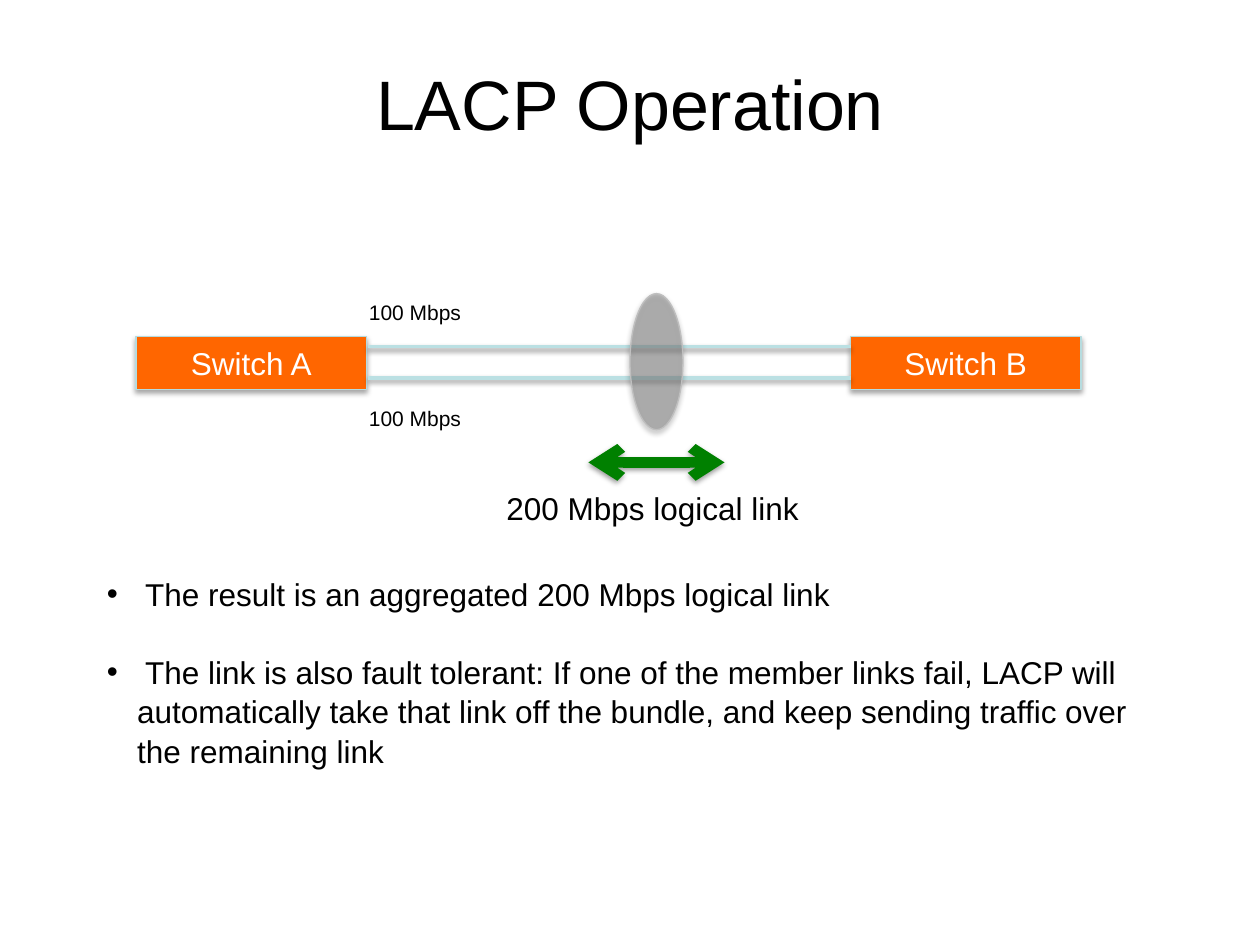
from lxml import etree
from pptx import Presentation
from pptx.dml.color import RGBColor
from pptx.enum.shapes import MSO_CONNECTOR, MSO_SHAPE
from pptx.enum.text import MSO_ANCHOR, MSO_AUTO_SIZE, PP_ALIGN
from pptx.oxml import parse_xml
from pptx.oxml.ns import nsdecls, qn
from pptx.util import Inches, Pt

RECT, OVAL = MSO_SHAPE.RECTANGLE, MSO_SHAPE.OVAL
STRAIGHT = MSO_CONNECTOR.STRAIGHT
MIDDLE, CENTER, LEFT = MSO_ANCHOR.MIDDLE, PP_ALIGN.CENTER, PP_ALIGN.LEFT
FIT = MSO_AUTO_SIZE.SHAPE_TO_FIT_TEXT

BLACK = RGBColor(0x00, 0x00, 0x00)
WHITE = RGBColor(0xFF, 0xFF, 0xFF)
ORANGE = RGBColor(0xFF, 0x66, 0x00)
GREEN = RGBColor(0x00, 0x80, 0x00)
GRAY = RGBColor(0x80, 0x80, 0x80)
SILVER = RGBColor(0xBF, 0xBF, 0xBF)
AQUA = RGBColor(0xB6, 0xDC, 0xDF)
PALE = RGBColor(0xBB, 0xE0, 0xE3)


class Deck:
    font = "Arial"
    size = 18

    def __init__(self):
        self.prs = Presentation()
        self.prs.slide_width, self.prs.slide_height = Inches(10), Inches(7.5)
        self.slide = self.prs.slides.add_slide(self.prs.slide_layouts[5])

    def run(self, para, text, size, color):
        run = para.add_run()
        run.text = text
        run.font.name, run.font.size = self.font, Pt(size)
        run.font.color.rgb = color

    def title(self, text, *box):
        shape = self.slide.shapes.title
        shape.left, shape.top, shape.width, shape.height = map(Inches, box)
        frame = shape.text_frame
        frame.vertical_anchor = MIDDLE
        frame.paragraphs[0].alignment = CENTER
        self.run(frame.paragraphs[0], text, 40, BLACK)

    def label(self, text, *box, size=size):
        frame = self.slide.shapes.add_textbox(*map(Inches, box)).text_frame
        frame.word_wrap, frame.auto_size = False, FIT
        frame.paragraphs[0].alignment = LEFT
        self.run(frame.paragraphs[0], text, size, BLACK)

    def bullets(self, items, *box):
        frame = self.slide.shapes.add_textbox(*map(Inches, box)).text_frame
        frame.word_wrap, frame.auto_size = True, FIT
        for i, item in enumerate(items):
            para = frame.add_paragraph() if i else frame.paragraphs[0]
            props = para._p.get_or_add_pPr()
            indent = Inches(0.24)
            props.set("marL", str(indent))
            props.set("indent", str(-indent))
            etree.SubElement(props, qn("a:buFont")).set("typeface", self.font)
            etree.SubElement(props, qn("a:buChar")).set("char", "•")
            para.line_spacing = 1.05
            if i:
                para.space_before = Pt(21.6)
            self.run(para, item, self.size, BLACK)

    def shadow(self, shape, dist, alpha):
        """Drop a soft black shadow straight down."""
        shape._element.spPr.append(parse_xml(
            f'<a:effectLst {nsdecls("a")}><a:outerShdw blurRad="{Pt(3.1)}" '
            f'dist="{Pt(dist)}" dir="5400000" rotWithShape="0">'
            f'<a:srgbClr val="000000"><a:alpha val="{alpha * 1000}"/>'
            '</a:srgbClr></a:outerShdw></a:effectLst>'))

    def shape(self, kind, fill, edge, *box, text="", alpha=100):
        shape = self.slide.shapes.add_shape(kind, *map(Inches, box))
        shape.fill.solid()
        shape.fill.fore_color.rgb = fill
        if alpha < 100:
            tint = shape._element.spPr.find(qn("a:solidFill"))[0]
            etree.SubElement(tint, qn("a:alpha")).set("val", str(alpha * 1000))
        shape.line.color.rgb, shape.line.width = edge, Pt(0.75)
        self.shadow(shape, 1.8, 35)
        if text:
            frame = shape.text_frame
            frame.vertical_anchor = MIDDLE
            frame.paragraphs[0].alignment = CENTER
            self.run(frame.paragraphs[0], text, self.size, WHITE)

    def line(self, left, right, y, color, width, arrows=False):
        ends = map(Inches, (left, y, right, y))
        line = self.slide.shapes.add_connector(STRAIGHT, *ends)
        line.line.color.rgb, line.line.width = color, Pt(width)
        if arrows:
            for end in ("a:headEnd", "a:tailEnd"):
                mark = etree.SubElement(line.line._get_or_add_ln(), qn(end))
                mark.set("type", "arrow")
        self.shadow(line, 1.6, 38)


def main():
    deck = Deck()
    deck.title("LACP Operation", 0.5, 0.3, 9, 1.03)
    deck.label("200 Mbps logical link", 3.92, 3.83, 2.55, 0.4)
    deck.bullets([
        " The result is an aggregated 200 Mbps logical link",
        " The link is also fault tolerant: If one of the member links fail, "
        "LACP will automatically take that link off the bundle, and keep "
        "sending traffic over the remaining link",
    ], 0.75, 4.5, 8.33, 1.62)
    for name, left in (("Switch A", 1.08), ("Switch B", 6.75)):
        deck.shape(RECT, ORANGE, AQUA, left, 2.67, 1.83, 0.42, text=name)
    for y in (2.75, 3):
        deck.line(2.92, 6.75, y, PALE, 2)
    deck.line(4.67, 5.75, 3.67, GREEN, 6, arrows=True)
    for top in (2.33, 3.17):
        deck.label("100 Mbps", 2.83, top, 0.94, 0.3, size=12)
    deck.shape(OVAL, GRAY, SILVER, 5, 2.33, 0.42, 1.08, alpha=49)
    deck.prs.save("out.pptx")


if __name__ == "__main__":
    main()
